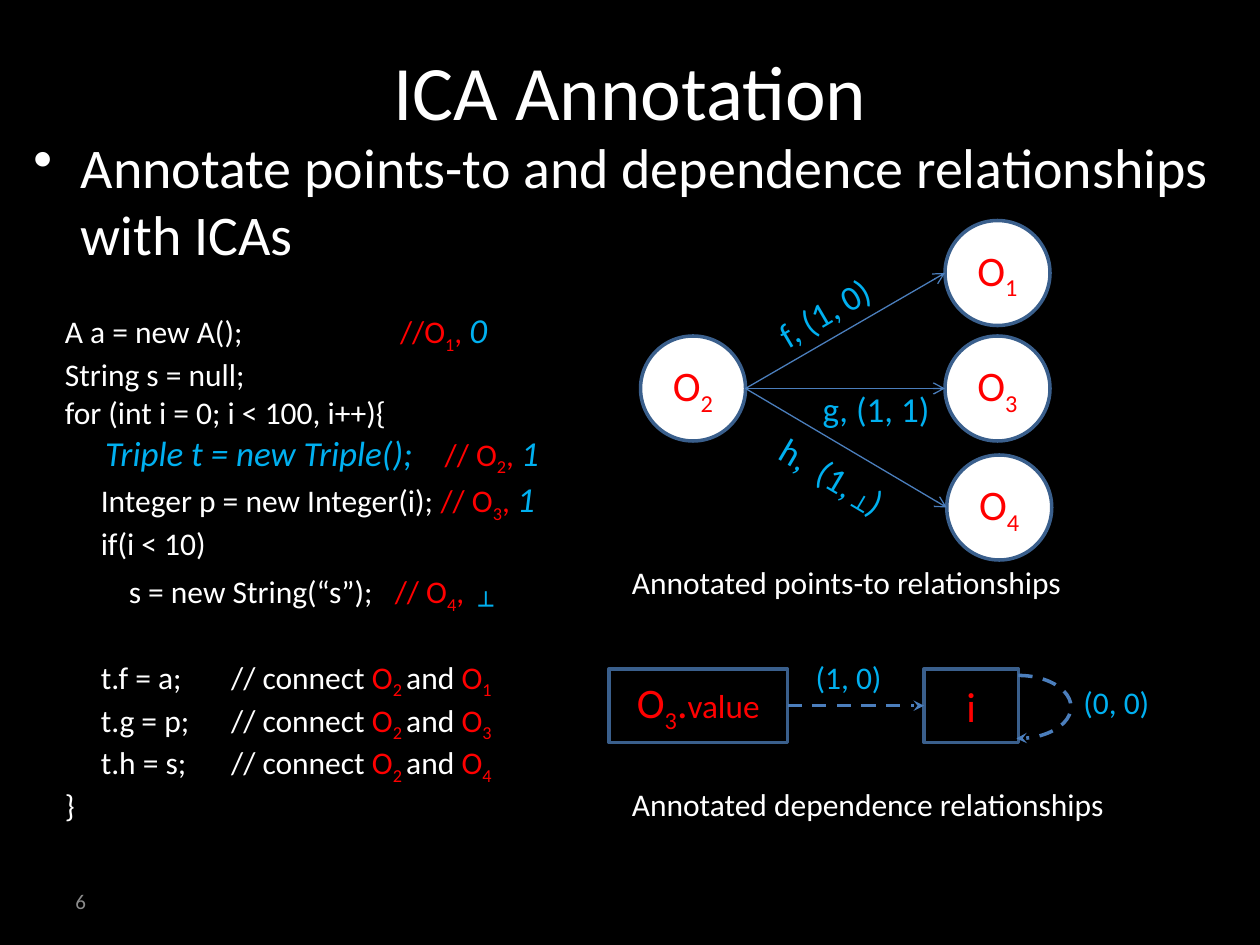
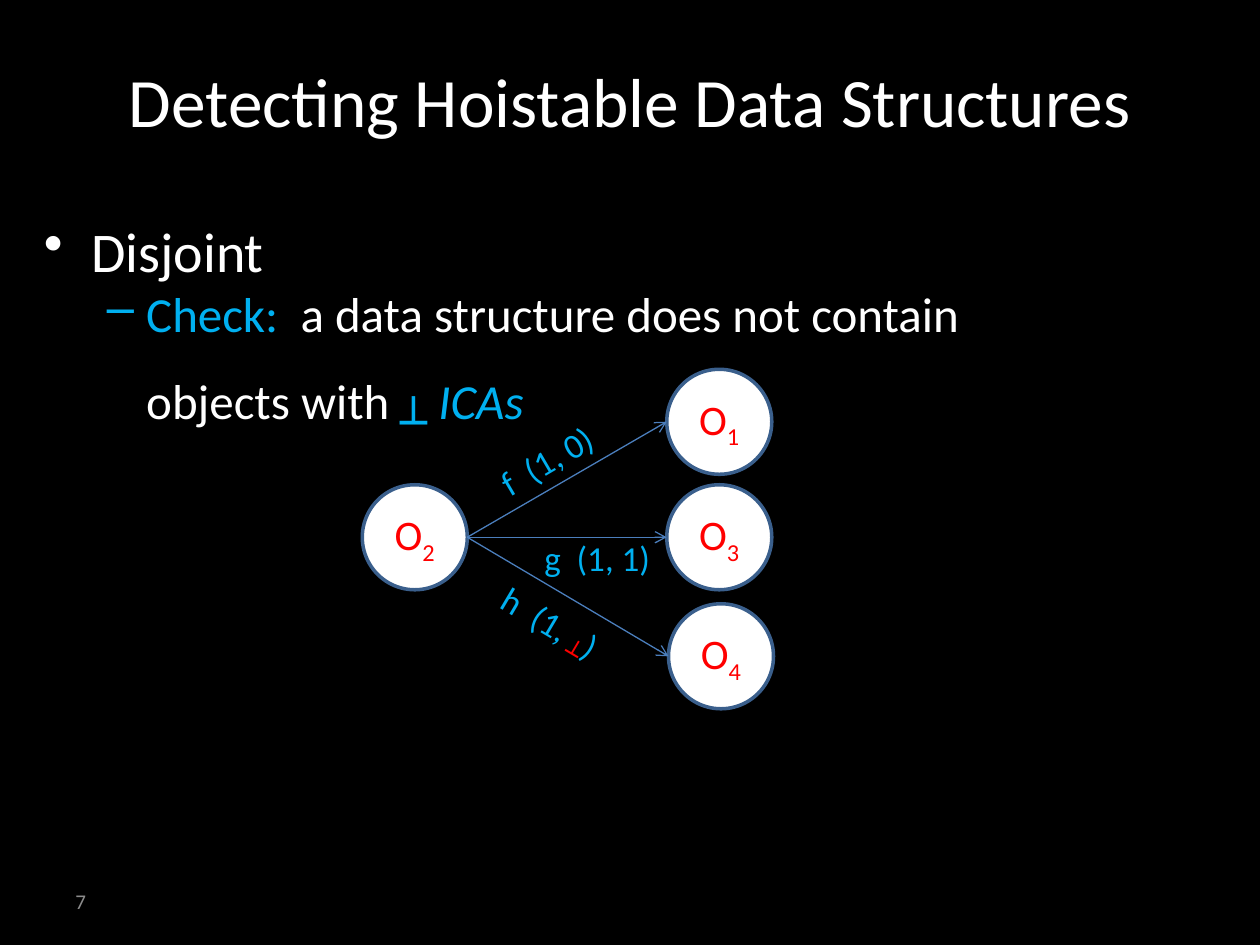
from lxml import etree
from pptx import Presentation
from pptx.dml.color import RGBColor
from pptx.enum.dml import MSO_LINE
from pptx.enum.shapes import MSO_CONNECTOR, MSO_SHAPE
from pptx.enum.text import MSO_ANCHOR, PP_ALIGN
from pptx.oxml.ns import qn
from pptx.util import Pt

OVAL, RECT, ARC = MSO_SHAPE.OVAL, MSO_SHAPE.RECTANGLE, MSO_SHAPE.ARC
STRAIGHT, DASH = MSO_CONNECTOR.STRAIGHT, MSO_LINE.DASH
CENTER, MIDDLE = PP_ALIGN.CENTER, MSO_ANCHOR.MIDDLE
FONT = "Calibri"
BLACK, WHITE, RED, CYAN = "000000", "FFFFFF", "FF0000", "00B0F0"
BORDER, ARROW, GRAY = "3A5F8C", "4B7EBC", "8C8C8C"
rgb = RGBColor.from_string


def write(paragraph, parts, size, color):
    """Each part is (text, color, size, marks); marks: i = italic, s = subscript."""
    paragraph.font.name = FONT
    paragraph.font.size = Pt(size)
    paragraph.font.color.rgb = rgb(color)
    for text, part_color, part_size, marks in parts:
        run = paragraph.add_run()
        run.text = text
        if part_color:
            run.font.color.rgb = rgb(part_color)
        if part_size:
            run.font.size = Pt(part_size)
        if "i" in marks:
            run.font.italic = True
        if "s" in marks:
            run._r.get_or_add_rPr().set("baseline", "-25000")


def outline(shape, color, width, head=None, dash=None):
    """Set the line, its arrowhead and dash, and drop the shadow."""
    shape.line.color.rgb = rgb(color)
    shape.line.width = Pt(width)
    if dash:
        shape.line.dash_style = dash
    properties = shape._element.spPr
    if head:
        etree.SubElement(properties.find(qn("a:ln")), qn("a:tailEnd"), type=head)
    etree.SubElement(properties, qn("a:effectLst"))


prs = Presentation()
prs.slide_width, prs.slide_height = Pt(720), Pt(540)
background = prs.slide_master.background.fill
background.solid()
background.fore_color.rgb = rgb(BLACK)

# Slides with titles and numbers
slides = []
for title, title_top, title_size, number in (
    ("ICA Annotation", 6, 44, "6"),
    ("Detecting Hoistable Data Structures", 12, 39.6, "7"),
):
    slide = prs.slides.add_slide(prs.slide_layouts[5])
    heading = slide.shapes.title
    heading.left, heading.top = Pt(36), Pt(title_top)
    heading.width, heading.height = Pt(648), Pt(90)
    heading.text_frame.vertical_anchor = MIDDLE
    heading.text_frame.paragraphs[0].alignment = CENTER
    write(heading.text_frame.paragraphs[0], [(title, None, None, "")], title_size, WHITE)
    footer = slide.shapes.add_textbox(Pt(36), Pt(500.5), Pt(168), Pt(28.75))
    footer.text_frame.vertical_anchor = MIDDLE
    write(footer.text_frame.paragraphs[0], [(number, None, None, "")], 12, GRAY)
    slides.append(slide)
annotation, detection = slides

# Bulleted points: (bullet, left margin, hanging indent, size, space before, parts)
points = (
    (annotation, (12, 72, 708, 114), [
        ("•", 27, 27, 32, 6.4, [
            ("Annotate points-to and dependence relationships with ICAs", None, None, "")]),
    ]),
    (detection, (18, 120, 612, 402), [
        ("•", 27, 27, 32, 6.4, [("Disjoint", None, None, "")]),
        ("–", 58.5, 22.5, 28, 0, [
            ("Check:  ", CYAN, None, ""),
            ("a data structure does not contain objects with ", None, None, ""),
            ("┴", CYAN, 44, "s"), (" ", CYAN, None, ""), ("ICAs", CYAN, None, "i")]),
    ]),
)
for slide, box, bullets in points:
    body = slide.shapes.add_textbox(*map(Pt, box)).text_frame
    body.word_wrap = True
    for index, (bullet, margin, hanging, size, before, parts) in enumerate(bullets):
        point = body.add_paragraph() if index else body.paragraphs[0]
        point.space_before = Pt(before)
        write(point, parts, size, WHITE)
        settings = point._p.get_or_add_pPr()
        settings.set("marL", str(Pt(margin)))
        settings.set("indent", str(-Pt(hanging)))
        settings.find(qn("a:defRPr")).addprevious(
            etree.Element(qn("a:buChar"), char=bullet))

# Code listing: (tab stops, space before, parts)
code = [
    ([191.5], 0, [("A a = new A();\t", None, None, ""), ("//O", RED, None, ""),
                  ("1", RED, None, "s"), (", ", RED, None, ""), ("0", CYAN, 20, "i")]),
    ([], 0, [("String s = null;", None, None, "")]),
    ([], 0, [("for (int i = 0; i < 100, i++){", None, None, "")]),
    ([23, 217], 0, [("\tTriple t = new Triple();\t", CYAN, 20, "i"),
                    ("// O", RED, None, ""), ("2", RED, None, "s"),
                    (", ", RED, None, ""), ("1", CYAN, 20, "i")]),
    ([20.5], 0, [("\tInteger p = new Integer(i); ", None, None, ""),
                 ("// O", RED, None, ""), ("3", RED, None, "s"),
                 (", ", RED, None, ""), ("1", CYAN, 20, "i")]),
    ([20.5], 0, [("\tif(i < 10)", None, None, "")]),
    ([36.5, 188.5], 0, [("\ts = new String(“s”);\t", None, None, ""),
                        ("// O", RED, None, ""), ("4", RED, None, "s"),
                        (",  ", RED, None, ""), ("┴", CYAN, 24, "is")]),
]
for field, value, target, before in (("f", "a", "1", 22), ("g", "p", "3", 0), ("h", "s", "4", 0)):
    code.append(([20.5, 95], before, [
        (f"\tt.{field} = {value};\t// connect ", None, None, ""),
        ("O", RED, None, ""), ("2 ", RED, None, "s"), ("and ", None, None, ""),
        ("O", RED, None, ""), (target, RED, None, "s")]))
code.append(([], 0, [("}", None, None, "")]))

listing = annotation.shapes.add_textbox(Pt(30), Pt(173), Pt(306), Pt(273.5)).text_frame
listing.word_wrap = True
for index, (stops, before, parts) in enumerate(code):
    line = listing.add_paragraph() if index else listing.paragraphs[0]
    line.space_before = Pt(before)
    write(line, parts, 18, WHITE)
    tabs = etree.Element(qn("a:tabLst"))
    for stop in stops:
        etree.SubElement(tabs, qn("a:tab"), pos=str(Pt(stop)), algn="l")
    if stops:
        line._p.pPr.find(qn("a:defRPr")).addprevious(tabs)

# Points-to graphs, placed from the corner of O2
NODE = 60
labels = []
for slide, left, top, comma, bottom_color in (
    (annotation, 366, 192, ",", CYAN),
    (detection, 207, 277, "", RED),
):
    gap = " " if comma else "  "
    nodes = (("2", 0, 0), ("1", 174, -66), ("3", 174, 0), ("4", 175, 68))
    for digit, dx, dy in nodes:
        node = slide.shapes.add_shape(OVAL, Pt(left + dx), Pt(top + dy), Pt(NODE), Pt(NODE))
        node.fill.solid()
        node.fill.fore_color.rgb = rgb(WHITE)
        outline(node, BORDER, 2)
        node.text_frame.vertical_anchor = MIDDLE
        node.text_frame.paragraphs[0].alignment = CENTER
        write(node.text_frame.paragraphs[0],
              [("O", None, None, ""), (digit, None, None, "s")], 24, RED)
        if dx:
            edge = slide.shapes.add_connector(
                STRAIGHT, Pt(left + NODE), Pt(top + NODE / 2),
                Pt(left + dx), Pt(top + dy + NODE / 2))
            outline(edge, ARROW, 0.75, "arrow")
    for dx, dy, angle, parts in (
        (67, -39, -30.4, [(f"f{comma}{gap}(1, 0)", None, None, "")]),
        (97, 26, 0, [(f"g{comma}{gap}(1, 1)", None, None, "")]),
        (70, 68.5, 30.7, [(f"h{comma}  (1, ", None, None, ""),
                          ("┴", bottom_color, 24, "s"), (")", None, None, "")]),
    ):
        labels.append((slide, (left + dx, top + dy, 108.75, 31.5), angle, parts, 20, CYAN))

# Dependence graph
for left, width, parts in (
    (348, 102, [("O", None, None, ""), ("3", None, None, "s"),
                (".", None, None, ""), ("value", None, 19, "")]),
    (528, 54, [("i", None, None, "")]),
):
    variable = annotation.shapes.add_shape(RECT, Pt(left), Pt(382.25), Pt(width), Pt(42))
    variable.fill.background()
    outline(variable, BORDER, 2)
    variable.text_frame.vertical_anchor = MIDDLE
    variable.text_frame.paragraphs[0].alignment = CENTER
    write(variable.text_frame.paragraphs[0], parts, 24, RED)
dependence = annotation.shapes.add_connector(STRAIGHT, Pt(450), Pt(403.25), Pt(528), Pt(403.25))
outline(dependence, ARROW, 2, "stealth", DASH)
self_loop = annotation.shapes.add_shape(ARC, Pt(552), Pt(386), Pt(60), Pt(36))
self_loop.adjustments[0] = 162
self_loop.adjustments[1] = 56.24
self_loop.fill.background()
outline(self_loop, ARROW, 2, "stealth", DASH)

# Edge labels and captions
for text, left, top, width, color in (
    ("(1, 0)", 459, 372.25, 52.5, CYAN),
    ("(0, 0)", 612, 386.5, 52.5, CYAN),
    ("Annotated points-to relationships", 354, 318, 263, WHITE),
    ("Annotated dependence relationships", 354, 445, 288, WHITE),
):
    labels.append((annotation, (left, top, width, 29), 0, [(text, None, None, "")], 18, color))
for slide, box, angle, parts, size, color in labels:
    label = slide.shapes.add_textbox(*map(Pt, box))
    label.rotation = angle
    label.text_frame.word_wrap = True
    write(label.text_frame.paragraphs[0], parts, size, color)

prs.save("out.pptx")
